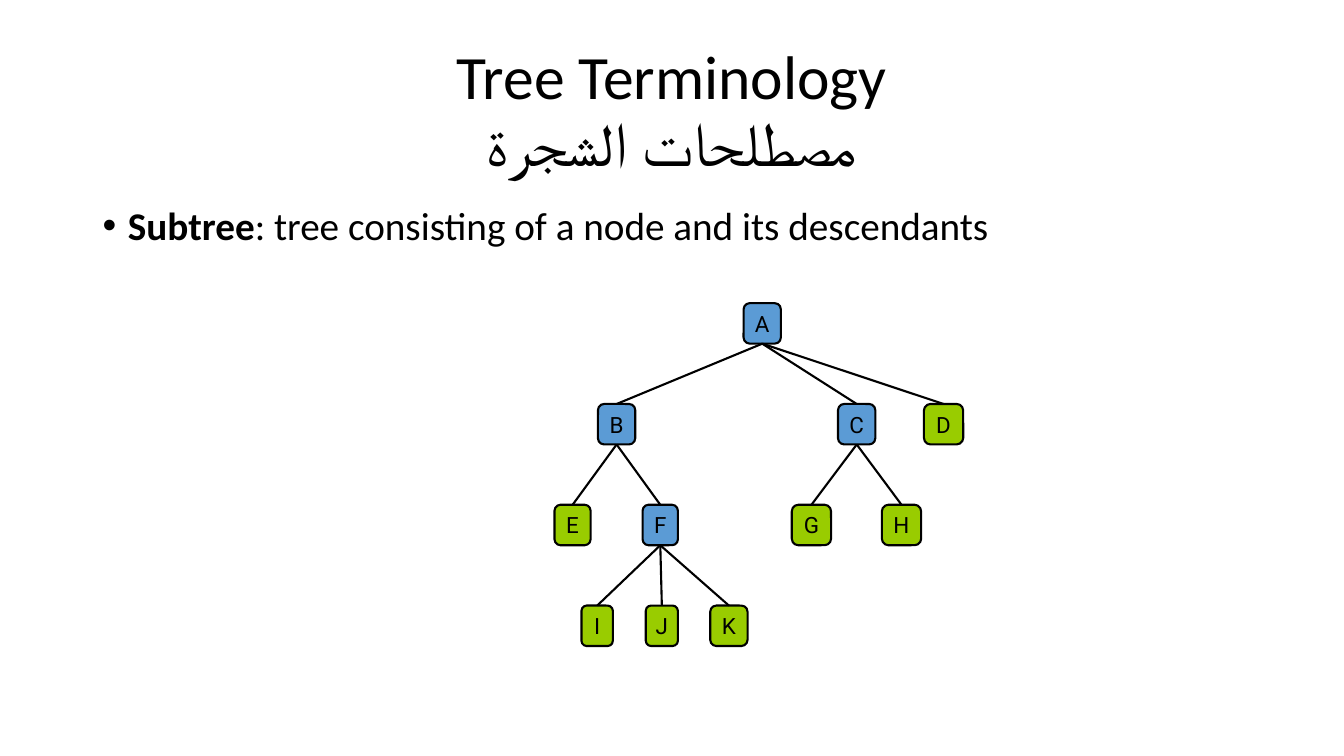
"""Builds a slide that explains subtrees with a tree diagram."""
from lxml.etree import SubElement
from pptx import Presentation
from pptx.dml.color import RGBColor
from pptx.enum.shapes import MSO_CONNECTOR, MSO_SHAPE
from pptx.enum.text import MSO_ANCHOR, MSO_AUTO_SIZE, PP_ALIGN
from pptx.oxml.ns import qn
from pptx.util import Cm, Pt

BLACK = RGBColor(0x00, 0x00, 0x00)
BLUE = RGBColor(0x5B, 0x9B, 0xD5)
GREEN = RGBColor(0x99, 0xCC, 0x00)

TREE_TOP = 7.64
LEVEL_STEP = 2.54
NODE_HEIGHT = 1.02
NODES = [
    ("A", None, 0, 19.21, 0.94),
    ("B", "A", 1, 15.54, 0.94),
    ("C", "A", 1, 21.59, 0.94),
    ("D", "A", 1, 23.78, 0.99),
    ("E", "B", 2, 14.43, 0.91),
    ("F", "B", 2, 16.64, 0.89),
    ("G", "C", 2, 20.45, 0.99),
    ("H", "C", 2, 22.72, 0.99),
    ("I", "F", 3, 15.05, 0.79),
    ("J", "F", 3, 16.68, 0.81),
    ("K", "F", 3, 18.37, 0.94),
]


def add_span(para, text, size, font="Calibri", bold=False):
    span = para.add_run()
    span.text = text
    span.font.size = Pt(size)
    span.font.name = font
    span.font.bold = bold
    span.font.color.rgb = BLACK
    SubElement(span.font._element, qn("a:cs")).set("typeface", font)


def place(box, left, top, width, height):
    box.left, box.top = Cm(left), Cm(top)
    box.width, box.height = Cm(width), Cm(height)
    box.text_frame.auto_size = MSO_AUTO_SIZE.NONE


deck = Presentation()
deck.slide_width = Cm(33.87)
deck.slide_height = Cm(19.05)
page = deck.slides.add_slide(deck.slide_layouts[1])

title = page.shapes.title
place(title, 2.33, 1.01, 29.21, 3.68)
title.text_frame.vertical_anchor = MSO_ANCHOR.MIDDLE
para = title.text_frame.paragraphs[0]
para.alignment = PP_ALIGN.CENTER
para.line_spacing = 0.9
add_span(para, "Tree Terminology", 44)
para.add_line_break()
add_span(para, "مصطلحات الشجرة", 44)

body = page.placeholders[1]
place(body, 2.33, 5.07, 29.21, 12.09)
para = body.text_frame.paragraphs[0]
para.line_spacing = 0.9
para.space_before = Pt(10)
add_span(para, "Subtree", 28, bold=True)
add_span(para, ": tree consisting of a node and its descendants", 28)
properties = para._p.get_or_add_pPr()
properties.set("marL", str(Cm(0.64)))
properties.set("indent", str(Cm(-0.64)))
SubElement(properties, qn("a:buFont")).set("typeface", "Arial")
SubElement(properties, qn("a:buChar")).set("char", "•")

parents = {parent for _, parent, *_ in NODES}
boxes = {}
for letter, parent, level, center, width in NODES:
    top = TREE_TOP + level * LEVEL_STEP
    box = page.shapes.add_shape(
        MSO_SHAPE.ROUNDED_RECTANGLE,
        Cm(center - width / 2), Cm(top), Cm(width), Cm(NODE_HEIGHT),
    )
    box.shadow.inherit = False
    box.fill.solid()
    box.fill.fore_color.rgb = BLUE if letter in parents else GREEN
    box.line.color.rgb = BLACK
    box.line.width = Pt(1.5)
    box.text_frame.word_wrap = False
    box.text_frame.vertical_anchor = MSO_ANCHOR.MIDDLE
    para = box.text_frame.paragraphs[0]
    para.alignment = PP_ALIGN.CENTER
    add_span(para, letter, 16, "Roboto")
    boxes[letter] = box

    if parent:
        trunk = boxes[parent]
        branch = page.shapes.add_connector(
            MSO_CONNECTOR.STRAIGHT,
            trunk.left + trunk.width // 2, trunk.top + trunk.height,
            Cm(center), Cm(top),
        )
        branch.begin_connect(trunk, 2)
        branch.end_connect(box, 0)
        branch.line.color.rgb = BLACK
        branch.line.width = Pt(1.5)
        SubElement(branch._element.spPr, qn("a:effectLst"))

deck.save("out.pptx")
